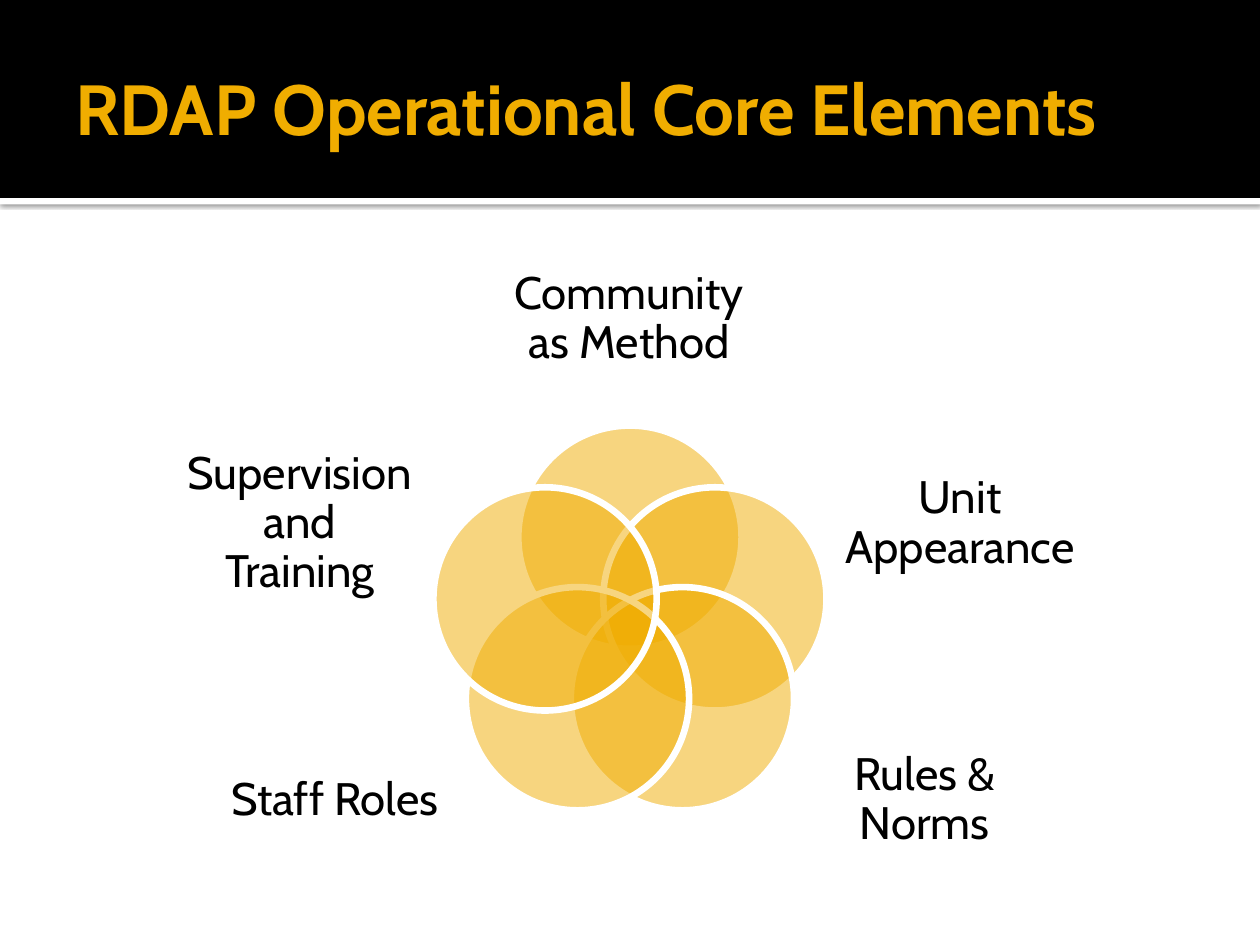
from dataclasses import dataclass
from math import cos, radians, sin

from lxml.etree import SubElement
from pptx import Presentation
from pptx.dml.color import RGBColor
from pptx.enum.shapes import MSO_SHAPE as Preset
from pptx.enum.text import MSO_ANCHOR as Anchor, PP_ALIGN as Align
from pptx.oxml.ns import qn
from pptx.util import Cm, Pt


@dataclass(frozen=True)
class Theme:
    font: str = "Cabin"
    gold: str = "F0AD00"
    black: str = "000000"
    white: str = "FFFFFF"
    title_size: float = 40.5
    label_size: float = 26
    outline: float = 3.78


class SlideBuilder:
    def __init__(self, slide, theme):
        self.slide = slide
        self.theme = theme

    def shape(self, preset, box, color):
        shape = self.slide.shapes.add_shape(preset, *map(Cm, box))
        shape.shadow.inherit = False
        shape.fill.solid()
        shape.fill.fore_color.rgb = RGBColor.from_string(color)
        shape.line.fill.background()
        return shape

    def band(self, box, color):
        return self.shape(Preset.RECTANGLE, box, color)

    def drop_shadow(self, shape):
        effects = shape._element.spPr.find(qn("a:effectLst"))
        shadow = SubElement(effects, qn("a:outerShdw"), blurRad=str(Pt(2.5)),
                            dist=str(Pt(0.8)), dir="5400000", rotWithShape="0")
        color = SubElement(shadow, qn("a:srgbClr"), val=self.theme.black)
        SubElement(color, qn("a:alpha"), val="60000")

    def petal(self, center_x, center_y, diameter):
        box = (center_x - diameter / 2, center_y - diameter / 2, diameter, diameter)
        shape = self.shape(Preset.OVAL, box, self.theme.gold)
        color = shape._element.spPr.find(qn("a:solidFill"))[0]
        SubElement(color, qn("a:alpha"), val="50000")
        shape.line.color.rgb = RGBColor.from_string(self.theme.white)
        shape.line.width = Pt(self.theme.outline)

    def text(self, box, words, size, color, bold=False, align=Align.LEFT,
             insets=(0, 0, 0, 0), spacing=1.0):
        frame = self.slide.shapes.add_textbox(*map(Cm, box)).text_frame
        frame.word_wrap = True
        frame.vertical_anchor = Anchor.MIDDLE
        (frame.margin_left, frame.margin_top,
         frame.margin_right, frame.margin_bottom) = map(Cm, insets)
        paragraph = frame.paragraphs[0]
        paragraph.alignment = align
        paragraph.line_spacing = spacing
        run = paragraph.add_run()
        run.text = words
        run.font.name = self.theme.font
        run.font.size = Pt(size)
        run.font.bold = bold
        run.font.color.rgb = RGBColor.from_string(color)

    def title(self, box, words):
        self.text(box, words, self.theme.title_size, self.theme.gold, bold=True,
                  insets=(0.25, 0.13, 0.13, 0.13))

    def label(self, box, words):
        self.text(box, words, self.theme.label_size, self.theme.black,
                  align=Align.CENTER, spacing=0.9)


def main():
    width, height = 25.4, 19.05
    presentation = Presentation()
    presentation.slide_width, presentation.slide_height = Cm(width), Cm(height)
    slide = presentation.slides.add_slide(presentation.slide_layouts[6])
    theme = Theme()
    builder = SlideBuilder(slide, theme)

    # Header
    header_height = 3.99
    strip = builder.band((0, header_height, width, 0.13), theme.white)
    builder.drop_shadow(strip)
    builder.band((0, 0, width, header_height), theme.black)
    builder.title((1.27, 0.43, 22.86, 3.48), "RDAP Operational Core Elements")

    # Label boxes: the left ones mirror the right ones
    label_width, label_height = 4.67, 3.28
    upper_right = (17.02, 8.92, label_width, label_height)
    lower_right = (16.31, 14.5, label_width, label_height)

    def mirror(box):
        return (width - box[0] - box[2], *box[1:])

    elements = [
        ("Community as Method", (10.08, 4.93, 5.21, 3.02)),
        ("Unit Appearance", upper_right),
        ("Rules & Norms", lower_right),
        ("Staff Roles", mirror(lower_right)),
        ("Supervision and Training", mirror(upper_right)),
    ]

    # Overlapping petals, clockwise from the top
    center_x, center_y, radius, diameter = width / 2, 12.63, 1.8, 4.5
    for index, (words, box) in enumerate(elements):
        angle = radians(index * 360 / len(elements))
        builder.petal(center_x + radius * sin(angle),
                      center_y - radius * cos(angle), diameter)
        builder.label(box, words)

    presentation.save("out.pptx")


if __name__ == "__main__":
    main()
